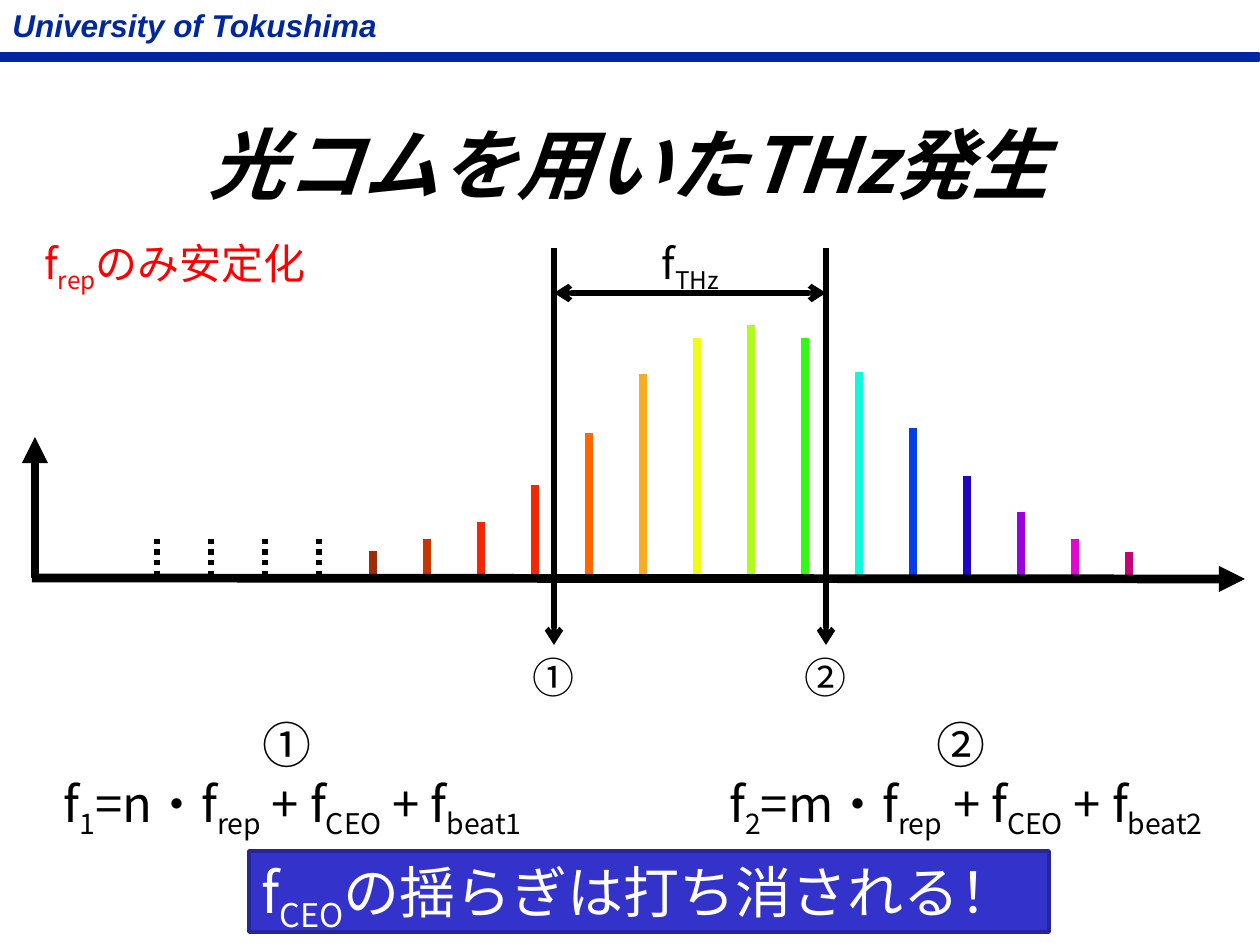
from pptx import Presentation
from pptx.dml.color import RGBColor
from pptx.enum.dml import MSO_LINE_DASH_STYLE as Dash
from pptx.enum.shapes import MSO_CONNECTOR as Connector, MSO_SHAPE as Shape
from pptx.enum.text import MSO_ANCHOR as Anchor, MSO_AUTO_SIZE as AutoSize, PP_ALIGN as Align
from pptx.oxml.ns import qn
from pptx.util import Emu, Pt
from lxml.etree import SubElement

EMU_PER_PX = 914400 / 126
SANS, CJK = "Arial", "Noto Sans CJK JP"
COLORS = {
    "navy": "00279F", "black": "000000", "white": "FFFFFF", "red": "FF0000",
    "banner": "3333CC", "banner_edge": "262697",
}

# Comb teeth: first position, spacing, foot, then (top, colour) for each
COMB_LEFT, COMB_STEP, COMB_FOOT = 157, 54, 580
DOTTED_TEETH, DOTTED_TOP = 4, 539
TEETH = [
    (551, "9F2C03"), (539, "C53603"), (522, "F42604"), (485, "F42604"),
    (433, "FF6600"), (374, "FAAC20"), (338, "F0FB17"), (325, "B0FB1B"),
    (338, "32F911"), (372, "12F8DD"), (428, "053CEB"), (476, "2005C3"),
    (512, "9A02DE"), (539, "E606D1"), (552, "C50372"),
]


def px(value):
    return Emu(round(value * EMU_PER_PX))


def rgb(color):
    return RGBColor.from_string(COLORS.get(color, color))


def write(frame, lines, size, color, font=CJK, align=Align.LEFT, bold=False, italic=False):
    """Fill a text frame; every second part between bars is a subscript."""
    style = {"name": font, "size": Pt(size), "bold": bold, "italic": italic}
    for index, line in enumerate(lines):
        para = frame.paragraphs[0] if index == 0 else frame.add_paragraph()
        para.alignment = align
        for position, part in enumerate(line.split("|")):
            span = para.add_run()
            span.text = part
            for name, value in style.items():
                setattr(span.font, name, value)
            span.font.color.rgb = rgb(color)
            props = span._r.get_or_add_rPr()
            SubElement(props, qn("a:ea")).set("typeface", font)
            if position % 2:
                props.set("baseline", "-25000")


def set_frame(frame):
    settings = {"word_wrap": False, "auto_size": AutoSize.SHAPE_TO_FIT_TEXT,
                "vertical_anchor": Anchor.TOP}
    for name, value in settings.items():
        setattr(frame, name, value)


def add_text(page, place, lines, size, color="black", **style):
    box = page.shapes.add_textbox(*map(px, place))
    set_frame(box.text_frame)
    write(box.text_frame, lines, size, color, **style)


def add_block(page, place, fill, edge, width):
    block = page.shapes.add_shape(Shape.RECTANGLE, *map(px, place))
    block.shadow.inherit = False
    block.fill.solid()
    block.fill.fore_color.rgb = rgb(fill)
    block.line.color.rgb = rgb(edge)
    block.line.width = Pt(width)
    return block


def add_line(page, ends, width, color="black", dash=None, head=None, tail=None):
    link = page.shapes.add_connector(Connector.STRAIGHT, *map(px, ends))
    link.line.color.rgb = rgb(color)
    link.line.width = Pt(width)
    if dash:
        link.line.dash_style = dash
    for tag, arrow in (("a:headEnd", head), ("a:tailEnd", tail)):
        if arrow:
            SubElement(link.line._get_or_add_ln(), qn(tag)).set("type", arrow)
    SubElement(link._element.spPr, qn("a:effectLst"))


def add_title(page, text):
    title = page.shapes.title
    place = {"left": 93, "top": 84, "width": 1071, "height": 158}
    for name, value in place.items():
        setattr(title, name, px(value))
    frame = title.text_frame
    frame.word_wrap = True
    frame.auto_size = AutoSize.NONE
    frame.vertical_anchor = Anchor.MIDDLE
    write(frame, [text], 44, "black", align=Align.CENTER, bold=True, italic=True)


def add_comb(page):
    teeth = [(DOTTED_TOP, "black")] * DOTTED_TEETH + TEETH
    for index, (top, color) in enumerate(teeth):
        x = COMB_LEFT + index * COMB_STEP
        dotted = index < DOTTED_TEETH
        add_line(page, (x, top, x, COMB_FOOT), 3 if dotted else 5, color,
                 dash=Dash.ROUND_DOT if dotted else None)


def main():
    deck = Presentation()
    deck.slide_width, deck.slide_height = px(1260), px(945)
    page = deck.slides.add_slide(deck.slide_layouts[5])

    # Header
    add_block(page, (0, 53, 1259, 8), "navy", "navy", 1)
    add_text(page, (0, 0, 393, 50), ["University of Tokushima"], 18, "navy",
             font=SANS, bold=True, italic=True)
    add_title(page, "光コムを用いたTHz発生")

    # Spectrum and its axes
    add_line(page, (35, 578, 35, 437), 5, tail="triangle")
    add_comb(page)
    add_line(page, (32, 578, 1245, 579), 5, tail="triangle")

    # Two picked frequencies and the gap between them
    left, right = 554, 826
    for x, number in ((left, "①"), (right, "②")):
        add_line(page, (x, 248, x, 645), 3, tail="arrow")
        add_text(page, (x - 34, 645, 68, 63), [number], 24)
    add_line(page, (left, 293, right, 293), 3, head="arrow", tail="arrow")
    add_text(page, (649, 231, 96, 63), ["f|THz"], 24)

    # Formulas
    for x, width, number, digit, mode in ((0, 585, "①", 1, "n"), (670, 592, "②", 2, "m")):
        formula = f"f|{digit}|={mode}・f|rep| + f|CEO| + f|beat{digit}"
        add_text(page, (x, 708, width, 131), [number + " ", formula], 28, align=Align.CENTER)

    # Conclusion and condition
    banner = add_block(page, (249, 851, 800, 81), "banner", "banner_edge", 2)
    set_frame(banner.text_frame)
    write(banner.text_frame, ["f|CEO|の揺らぎは打ち消される！"], 32, "white")
    add_text(page, (32, 231, 304, 63), ["f|rep|のみ安定化"], 24, "red")

    deck.save("out.pptx")


if __name__ == "__main__":
    main()
